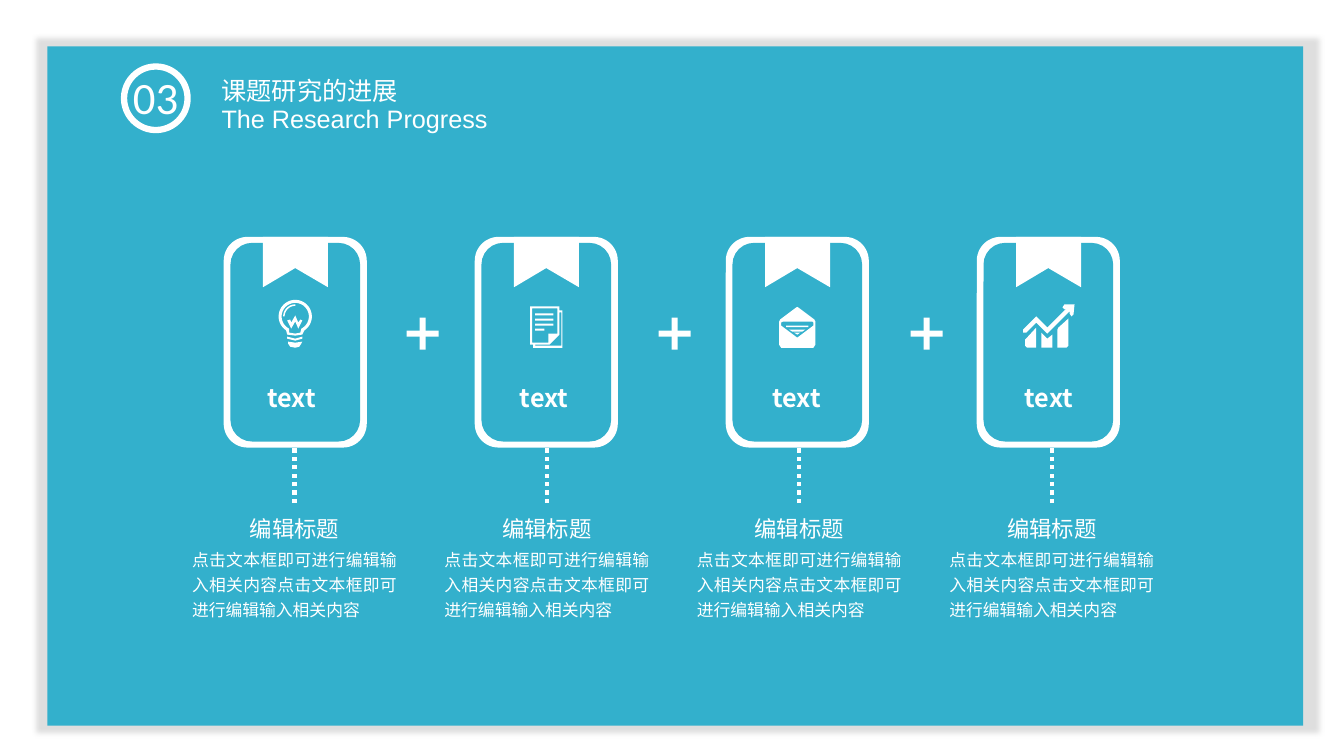
from math import cos, radians, sin

from lxml.etree import SubElement
from pptx import Presentation
from pptx.dml.color import RGBColor
from pptx.enum.dml import MSO_LINE as Dash
from pptx.enum.shapes import MSO_CONNECTOR as Connector, MSO_SHAPE as Preset
from pptx.enum.text import MSO_AUTO_SIZE as AutoSize, PP_ALIGN as Align
from pptx.oxml.ns import qn
from pptx.util import Pt

WHITE, TEAL, SHADOW = "FFFFFF", "33B0CC", "A6A6A6"
CJK = "Noto Sans CJK SC"
BODY = "点击文本框即可进行编辑输入相关内容点击文本框即可进行编辑输入相关内容"
CARDS = [("text ", "编辑标题", BODY)] * 4


def box(left, top, right, bottom):
    return [(left, top), (right, top), (right, bottom), (left, bottom)]


def arc(radius, start, end, center=(71, 79)):
    steps = 40
    angles = [radians(start + (end - start) * step / steps) for step in range(steps + 1)]
    return [(center[0] + radius * cos(a), center[1] + radius * sin(a)) for a in angles]


UNIT = 0.72
RIBBON = [[(39, 0), (103.5, 0), (103.5, 50), (71, 31), (39, 50)]]
BULB = [
    arc(16.5, 123, 417) + [(78, 97), (71, 98), (63, 97)],
    arc(13.5, 117, 423) + [(76, 95), (71, 96), (65, 95)],
    arc(12, 180, 270) + arc(10.5, 270, 180),
    [(74, 85), (71, 78), (67, 85), (66, 82), (63, 83),
     (67, 91), (71, 84), (74, 91), (78, 83), (76, 82)],
    [(63, 99), (63, 101), (71, 103), (78, 101), (78, 99), (71, 101)],
    [(64, 104), (64, 106), (66, 109), (71, 110),
     (75, 109), (77, 106), (78, 104), (71, 105)],
]
DOCUMENT = [
    [(84, 73), (84, 69), (55, 69), (55, 107), (58, 107), (58, 110), (87, 110), (87, 73)],
    [(57, 105), (57, 71), (82, 71), (82, 96), (73, 96), (73, 105)],
    [(86, 108), (60, 108), (60, 107), (74, 107), (84, 97), (84, 75), (86, 75)],
    *[box(60, top, right, top + 2) for top, right in [(76, 78), (81, 78), (86, 78), (91, 69)]],
]
ENVELOPE = [
    [(88, 82), (72, 70), (71, 69.5), (70, 70), (54, 82), (53, 84),
     (53, 107), (55, 110), (87, 110), (89, 107), (89, 84)],
    [(87, 88), (71, 100), (55, 88), (55, 85), (57, 84), (86, 84), (87, 85)],
    [(66, 94), (76, 94), (79, 92), (63, 92)],
    [(71, 97), (74, 95), (68, 95)],
    box(60, 88, 82, 89.5),
]
GROWTH = [
    [(64, 95), (64, 110), (75, 110), (75, 97), (70, 101)],
    [(48, 102), (48, 108), (50, 110), (59, 110), (59, 90)],
    [(87, 67), (85, 70), (87, 72), (89, 71), (70, 90), (59, 79), (46, 92), (46, 95),
     (49, 95), (59, 85), (70, 96), (92, 74), (92, 76), (94, 79), (96, 77), (97, 67)],
    [(80, 92), (80, 110), (89, 110), (91, 108), (91, 81), (81, 90)],
]
ICONS = [BULB, DOCUMENT, ENVELOPE, GROWTH]

CARD_LEFT, CARD_TOP, CARD_WIDTH, CARD_HEIGHT, CARD_PITCH = 159.8, 169.2, 102.2, 150.5, 179.3
RIM_X, RIM_Y = 4.8, 4.3
CAPTION_CENTER, CAPTION_PITCH = 210.4, 180.3
PLUS_CENTER, PLUS_MIDDLE, PLUS_PITCH = 301.9, 238.3, 180
PLUS_LENGTH, PLUS_THICKNESS = 22.8, 4.3

presentation = Presentation()
presentation.slide_width, presentation.slide_height = Pt(960), Pt(540)
slide = presentation.slides.add_slide(presentation.slide_layouts[6])


def color(hex_string):
    return RGBColor.from_string(hex_string)


def paint(shape, fill):
    shape.shadow.inherit = False
    shape.fill.solid()
    shape.fill.fore_color.rgb = color(fill)
    shape.line.fill.background()
    return shape


def add_block(preset, left, top, width, height, fill):
    shape = slide.shapes.add_shape(preset, Pt(left), Pt(top), Pt(width), Pt(height))
    return paint(shape, fill)


def add_outline(contours, left, top):
    placed = [[(Pt(left + x * UNIT), Pt(top + y * UNIT)) for x, y in contour]
              for contour in contours]
    builder = slide.shapes.build_freeform(*placed[0][0], scale=1.0)
    for index, contour in enumerate(placed):
        if index:
            builder.move_to(*contour[0])
        builder.add_line_segments(contour[1:], close=True)
    return paint(builder.convert_to_shape(), WHITE)


def add_text(text, left, top, width, height, size, font=CJK, align=Align.LEFT,
             spacing=1.0, bold=False, wrap=True):
    shape = slide.shapes.add_textbox(Pt(left), Pt(top), Pt(width), Pt(height))
    frame = shape.text_frame
    frame.word_wrap = wrap
    frame.auto_size = AutoSize.SHAPE_TO_FIT_TEXT
    paragraph = frame.paragraphs[0]
    paragraph.alignment = align
    paragraph.line_spacing = spacing
    run = paragraph.add_run()
    run.text = text
    run.font.size = Pt(size)
    run.font.bold = bold
    run.font.name = font
    run.font.color.rgb = color(WHITE)
    SubElement(run.font._element, qn("a:ea"), typeface=font)


def add_panel():
    panel = add_block(Preset.RECTANGLE, 33.8, 33.1, 897.1, 485.3, TEAL)
    effects = panel._element.spPr.find(qn("a:effectLst"))
    shadow = SubElement(effects, qn("a:outerShdw"), blurRad=str(Pt(4)), dist=str(Pt(2)),
                        dir="0", sx="102000", sy="102000", algn="ctr", rotWithShape="0")
    tint = SubElement(shadow, qn("a:srgbClr"), val=SHADOW)
    SubElement(tint, qn("a:alpha"), val="36000")


def add_header():
    ring = add_block(Preset.OVAL, 88.6, 47.5, 45.4, 45.4, TEAL)
    ring.fill.background()
    ring.line.color.rgb = color(WHITE)
    ring.line.width = Pt(4.5)
    add_text("03", 79.9, 46.1, 62.6, 46.1, 32, "Calibri", Align.CENTER)
    add_text("课题研究的进展", 151.2, 28.8, 141.8, 44.6, 18, spacing=2.0, wrap=False)
    add_text("The Research Progress", 151.2, 70.6, 395.3, 28.8, 18, "Arial")


def add_card(index, icon, label, heading, body):
    left = CARD_LEFT + index * CARD_PITCH
    center = CAPTION_CENTER + index * CAPTION_PITCH
    add_block(Preset.ROUNDED_RECTANGLE, left, CARD_TOP, CARD_WIDTH, CARD_HEIGHT, WHITE)
    add_block(Preset.ROUNDED_RECTANGLE, left + RIM_X, CARD_TOP + RIM_Y,
              CARD_WIDTH - 2 * RIM_X, CARD_HEIGHT - 2 * RIM_Y, TEAL)
    add_outline(RIBBON, left, CARD_TOP)
    add_outline(icon, left, CARD_TOP)

    stem = slide.shapes.add_connector(Connector.STRAIGHT, Pt(center), Pt(359.3),
                                      Pt(center), Pt(CARD_TOP + CARD_HEIGHT))
    stem.line.color.rgb = color(WHITE)
    stem.line.width = Pt(3)
    stem.line.dash_style = Dash.ROUND_DOT
    SubElement(stem._element.spPr, qn("a:effectLst"))

    add_text(label, center - 34.5, 269.3, 69, 28.8, 18, align=Align.CENTER, bold=True)
    add_text(heading, center - 54, 364.3, 108, 26.6, 16, align=Align.CENTER)
    add_text(body, center - 80.3, 385.2, 160.6, 61.9, 12, align=Align.JUSTIFY, spacing=1.25)


def add_plus(index):
    center = PLUS_CENTER + index * PLUS_PITCH
    for width, height in [(PLUS_THICKNESS, PLUS_LENGTH), (PLUS_LENGTH, PLUS_THICKNESS)]:
        add_block(Preset.RECTANGLE, center - width / 2, PLUS_MIDDLE - height / 2,
                  width, height, WHITE)


add_panel()
add_header()
for index, (icon, card) in enumerate(zip(ICONS, CARDS)):
    add_card(index, icon, *card)
for index in range(len(CARDS) - 1):
    add_plus(index)
presentation.save("out.pptx")
